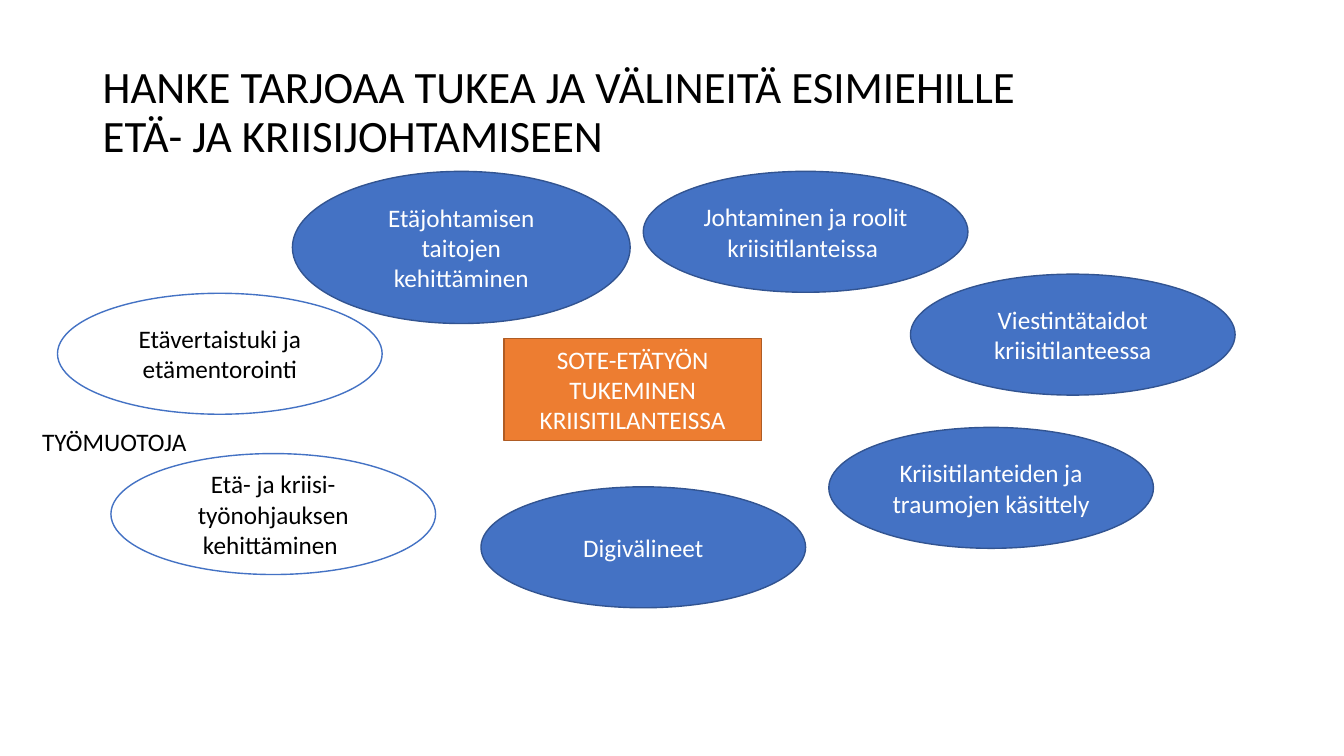
from pptx import Presentation
from pptx.dml.color import RGBColor
from pptx.enum.shapes import MSO_SHAPE as SHAPE
from pptx.enum.text import MSO_ANCHOR as ANCHOR, PP_ALIGN as ALIGN
from pptx.util import Inches, Pt

BLUE, DARK_BLUE = "4472C4", "325491"
ORANGE, DARK_ORANGE = "ED7D31", "AF5C24"
WHITE, BLACK = "FFFFFF", "000000"
OVAL_SIZE = (3.22, 1.2)

THEMES = [
    ("Viestintätaidot kriisitilanteessa", 9.03, 2.72, OVAL_SIZE),
    ("Kriisitilanteiden ja traumojen käsittely", 8.22, 4.24, OVAL_SIZE),
    ("Digivälineet", 4.77, 4.83, OVAL_SIZE),
    ("Etäjohtamisen taitojen kehittäminen", 2.9, 1.7, (3.35, 1.51)),
    ("Johtaminen ja roolit kriisitilanteissa ", 6.38, 1.7, OVAL_SIZE),
]
WORK_FORMS = [
    ("Etävertaistuki ja etämentorointi", 0.57, 2.91),
    ("Etä- ja kriisi-työnohjauksen kehittäminen ", 1.1, 4.5),
]


def rgb(color):
    return RGBColor.from_string(color)


def write(sp, text, size=18, color=BLACK, align=ALIGN.LEFT,
          anchor=ANCHOR.TOP, spacing=1.0):
    tf = sp.text_frame
    tf.word_wrap = True
    tf.vertical_anchor = anchor
    p = tf.paragraphs[0]
    p.text = text
    p.alignment = align
    p.line_spacing = spacing
    for r in p.runs:
        r.font.name = "Calibri"
        r.font.size = Pt(size)
        r.font.color.rgb = rgb(color)


def add_label(s, text, x, y, w, h, **fmt):
    sp = s.shapes.add_textbox(Inches(x), Inches(y), Inches(w), Inches(h))
    write(sp, text, **fmt)


def add_node(s, kind, text, x, y, size, fill, line, color=WHITE):
    w, h = size
    sp = s.shapes.add_shape(kind, Inches(x), Inches(y), Inches(w), Inches(h))
    sp.shadow.inherit = False
    sp.fill.solid()
    sp.fill.fore_color.rgb = rgb(fill)
    sp.line.color.rgb = rgb(line)
    sp.line.width = Pt(1)
    write(sp, text, color=color, align=ALIGN.CENTER, anchor=ANCHOR.MIDDLE)


def main():
    prs = Presentation()
    prs.slide_width, prs.slide_height = Inches(13.33), Inches(7.5)
    s = prs.slides.add_slide(prs.slide_layouts[6])
    add_label(s, "HANKE TARJOAA TUKEA JA VÄLINEITÄ ESIMIEHILLE \vETÄ- JA KRIISIJOHTAMISEEN",
              0.92, 0.4, 11.5, 1.45, size=32, anchor=ANCHOR.MIDDLE, spacing=0.9)
    for text, x, y, size in THEMES:
        add_node(s, SHAPE.OVAL, text, x, y, size, BLUE, DARK_BLUE)
    for text, x, y in WORK_FORMS:
        add_node(s, SHAPE.OVAL, text, x, y, OVAL_SIZE, WHITE, BLUE, BLACK)
    add_node(s, SHAPE.RECTANGLE, "SOTE-ETÄTYÖN TUKEMINEN KRIISITILANTEISSA",
             5, 3.36, (2.55, 1.01), ORANGE, DARK_ORANGE)
    add_label(s, "TYÖMUOTOJA", 0.32, 4.18, 2.44, 0.4)
    prs.save("out.pptx")


if __name__ == "__main__":
    main()
